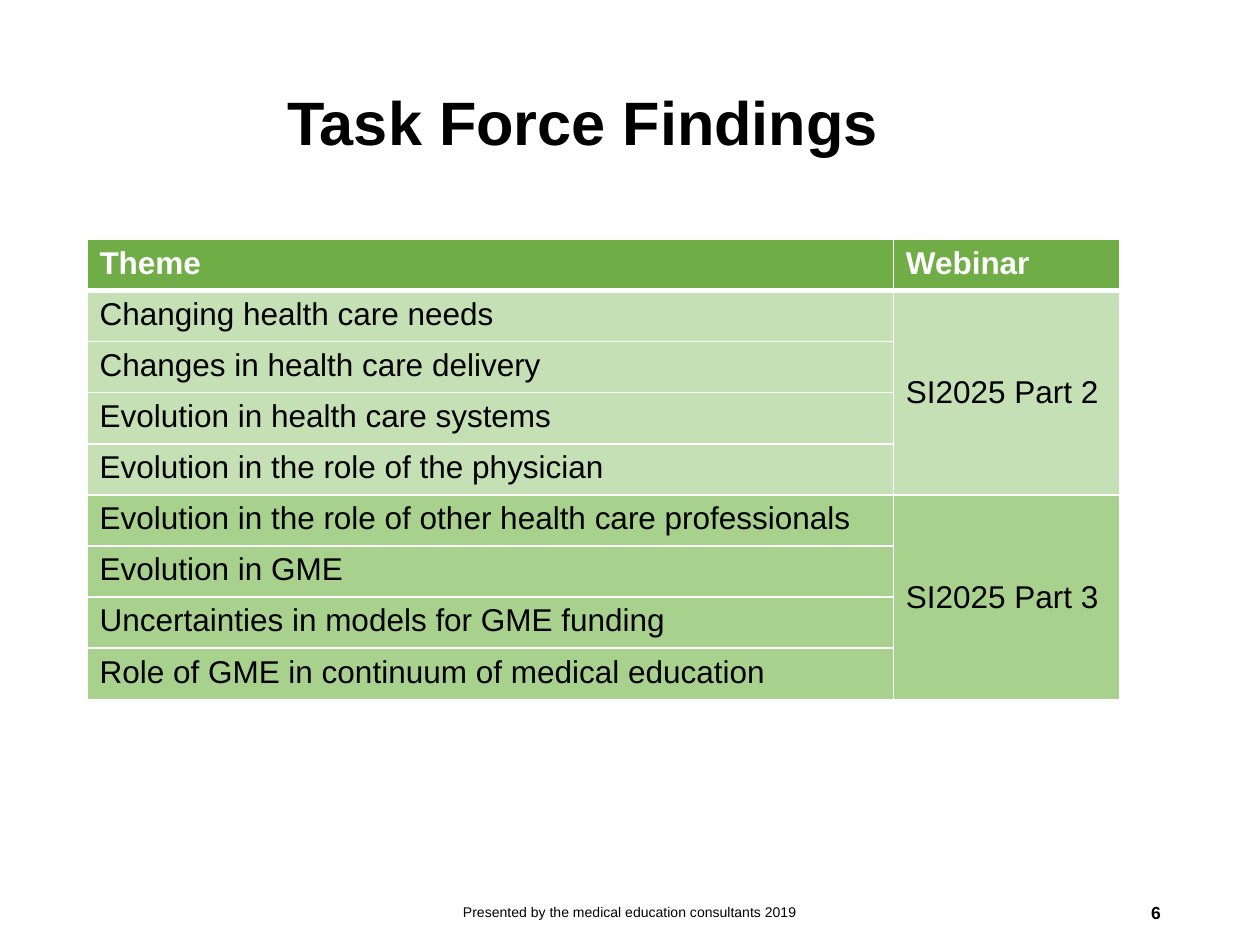
from dataclasses import dataclass

from lxml.etree import SubElement
from pptx import Presentation
from pptx.dml.color import RGBColor
from pptx.enum.text import MSO_ANCHOR as Anchor, PP_ALIGN as Align
from pptx.oxml.ns import qn
from pptx.util import Inches, Pt


@dataclass(frozen=True)
class Theme:
    font: str = "Arial"
    ink: str = "000000"
    paper: str = "FFFFFF"
    header: str = "70AD47"
    light: str = "C5E0B4"
    medium: str = "A9D18E"
    title_size: int = 35
    table_size: int = 18
    footer_size: int = 8
    number_size: int = 10
    rule: int = 1
    header_rule: int = 3


THEME = Theme()
HEADINGS = ("Theme", "Webinar")
COLUMN_WIDTHS = (6.4, 1.8)
GROUPS = (
    ("SI2025 Part 2", THEME.light, (
        "Changing health care needs",
        "Changes in health care delivery",
        "Evolution in health care systems",
        "Evolution in the role of the physician",
    )),
    ("SI2025 Part 3", THEME.medium, (
        "Evolution in the role of other health care professionals",
        "Evolution in GME",
        "Uncertainties in models for GME funding",
        "Role of GME in continuum of medical education",
    )),
)


def write(para, text, size, color=THEME.ink, bold=False):
    span = para.add_run()
    span.text = text
    formats = {"name": THEME.font, "size": Pt(size), "bold": bold}
    for name, value in formats.items():
        setattr(span.font, name, value)
    span.font.color.rgb = RGBColor.from_string(color)


def add_text(page, box, text, size, bold=False, **layout):
    frame = page.shapes.add_textbox(*map(Inches, box)).text_frame
    frame.word_wrap = True
    frame.vertical_anchor = Anchor.MIDDLE
    para = frame.paragraphs[0]
    for name, value in layout.items():
        setattr(para, name, value)
    write(para, text, size, bold=bold)


def set_borders(cell, **widths):
    """Draw white rules; sides L, R, T and B default to the thin rule."""
    properties = cell._tc.get_or_add_tcPr()
    for side in "LRTB":
        width = Pt(widths.get(side, THEME.rule))
        line = SubElement(properties, qn(f"a:ln{side}"), w=str(width))
        fill = SubElement(line, qn("a:solidFill"))
        SubElement(fill, qn("a:srgbClr"), val=THEME.paper)


def style_cell(cell, fill, **widths):
    set_borders(cell, **widths)
    cell.fill.solid()
    cell.fill.fore_color.rgb = RGBColor.from_string(fill)


def add_findings(page, box):
    row_count = 1 + sum(len(themes) for _, _, themes in GROUPS)
    table = page.shapes.add_table(
        row_count, len(HEADINGS), *map(Inches, box)).table
    for column, width in zip(table.columns, COLUMN_WIDTHS):
        column.width = Inches(width)
    for row in table.rows:
        row.height = Inches(box[3] / row_count)

    # Header row
    for index, heading in enumerate(HEADINGS):
        cell = table.cell(0, index)
        style_cell(cell, THEME.header, B=THEME.header_rule)
        write(cell.text_frame.paragraphs[0], heading, THEME.table_size,
              THEME.paper, bold=True)

    # Themes, grouped by the webinar that covers them
    first = 1
    for webinar, fill, themes in GROUPS:
        for row, theme in enumerate(themes, first):
            top = THEME.header_rule if row == 1 else THEME.rule
            for index in range(len(HEADINGS)):
                style_cell(table.cell(row, index), fill, T=top)
            write(table.cell(row, 0).text_frame.paragraphs[0], theme,
                  THEME.table_size)
        group = table.cell(first, 1)
        group.merge(table.cell(first + len(themes) - 1, 1))
        group.vertical_anchor = Anchor.MIDDLE
        write(group.text_frame.paragraphs[0], webinar, THEME.table_size)
        first += len(themes)


def add_footer(page, top, height):
    add_text(page, (3.31, top, 3.38, height),
             "Presented by the medical education consultants 2019",
             THEME.footer_size, alignment=Align.CENTER)
    add_text(page, (7.06, top, 2.25, height), "6",
             THEME.number_size, bold=True, alignment=Align.RIGHT)


def main():
    deck = Presentation()
    deck.slide_width, deck.slide_height = Inches(10), Inches(7.5)
    page = deck.slides.add_slide(deck.slide_layouts[6])
    add_findings(page, (0.69, 1.9, sum(COLUMN_WIDTHS), 3.65))
    add_text(page, (2.18, 0.27, 7.14, 1.45), "Task Force Findings",
             THEME.title_size, bold=True, line_spacing=0.9)
    add_footer(page, 7.04, 0.4)
    deck.save("out.pptx")


if __name__ == "__main__":
    main()
